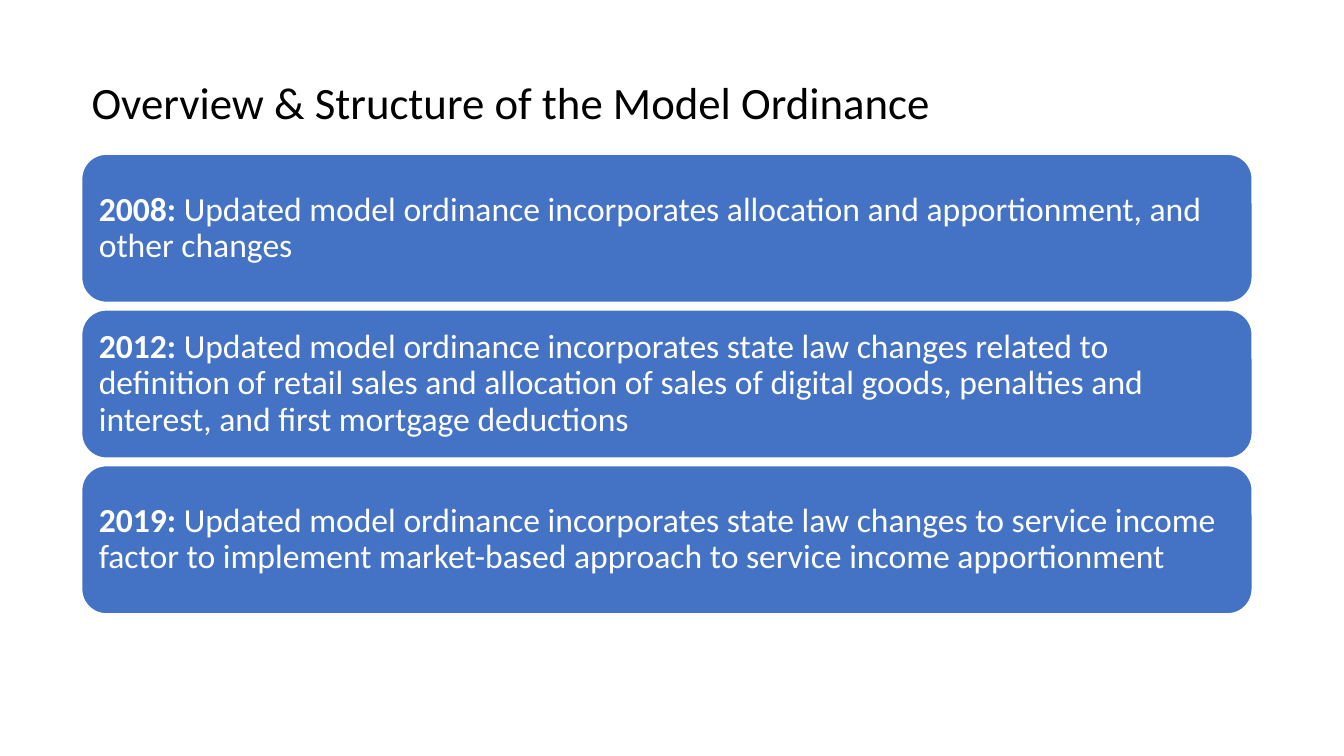
from pptx import Presentation
from pptx import util as u
from pptx.dml.color import RGBColor
from pptx.enum import shapes, text

COLORS = {"title": "000000", "card": "4472C4", "white": "FFFFFF"}
FONT = "Calibri"

# Column and rows, in inches
LEFT, WIDTH = 0.81, 11.61
TITLE_TOP, TITLE_HEIGHT = 0.5, 0.83
CARD_TOP, CARD_HEIGHT, CARD_STEP = 1.53, 1.47, 1.545

UPDATES = [
    ("2008: ", "Updated model ordinance incorporates allocation and apportionment, "
               "and other changes"),
    ("2012: ", "Updated model ordinance incorporates state law changes related to "
               "definition of retail sales and allocation of sales of digital goods, "
               "penalties and interest, and first mortgage deductions"),
    ("2019: ", "Updated model ordinance incorporates state law changes to service "
               "income factor to implement market-based approach to service income "
               "apportionment"),
]


def format_run(run, size, color, bold=False):
    run.font.name = FONT
    run.font.size = u.Pt(size)
    run.font.bold = bold
    run.font.color.rgb = RGBColor.from_string(COLORS[color])


presentation = Presentation()
presentation.slide_width = u.Inches(13.33)
presentation.slide_height = u.Inches(7.5)
slide = presentation.slides.add_slide(presentation.slide_layouts[6])

# Title
title = slide.shapes.add_textbox(u.Inches(LEFT), u.Inches(TITLE_TOP),
                                 u.Inches(WIDTH), u.Inches(TITLE_HEIGHT))
title.text_frame.word_wrap = True
title.text_frame.vertical_anchor = text.MSO_ANCHOR.BOTTOM
title.text_frame.text = "Overview & Structure of the Model Ordinance"
paragraph = title.text_frame.paragraphs[0]
paragraph.line_spacing = 0.9
format_run(paragraph.runs[0], 32, "title")

# One card per update of the ordinance
for row, (year, change) in enumerate(UPDATES):
    card = slide.shapes.add_shape(
        shapes.MSO_SHAPE.ROUNDED_RECTANGLE,
        u.Inches(LEFT), u.Inches(CARD_TOP + row * CARD_STEP),
        u.Inches(WIDTH), u.Inches(CARD_HEIGHT))
    card.shadow.inherit = False
    card.fill.solid()
    card.fill.fore_color.rgb = RGBColor.from_string(COLORS["card"])
    card.line.color.rgb = RGBColor.from_string(COLORS["white"])
    card.line.width = u.Pt(1)

    frame = card.text_frame
    frame.word_wrap = True
    frame.vertical_anchor = text.MSO_ANCHOR.MIDDLE
    frame.margin_left = frame.margin_right = u.Inches(0.1)
    frame.margin_top = frame.margin_bottom = u.Inches(0.1)

    paragraph = frame.paragraphs[0]
    paragraph.alignment = text.PP_ALIGN.LEFT
    paragraph.line_spacing = 0.9
    for words, bold in ((year, True), (change, False)):
        run = paragraph.add_run()
        run.text = words
        format_run(run, 24, "white", bold)

presentation.save("out.pptx")
